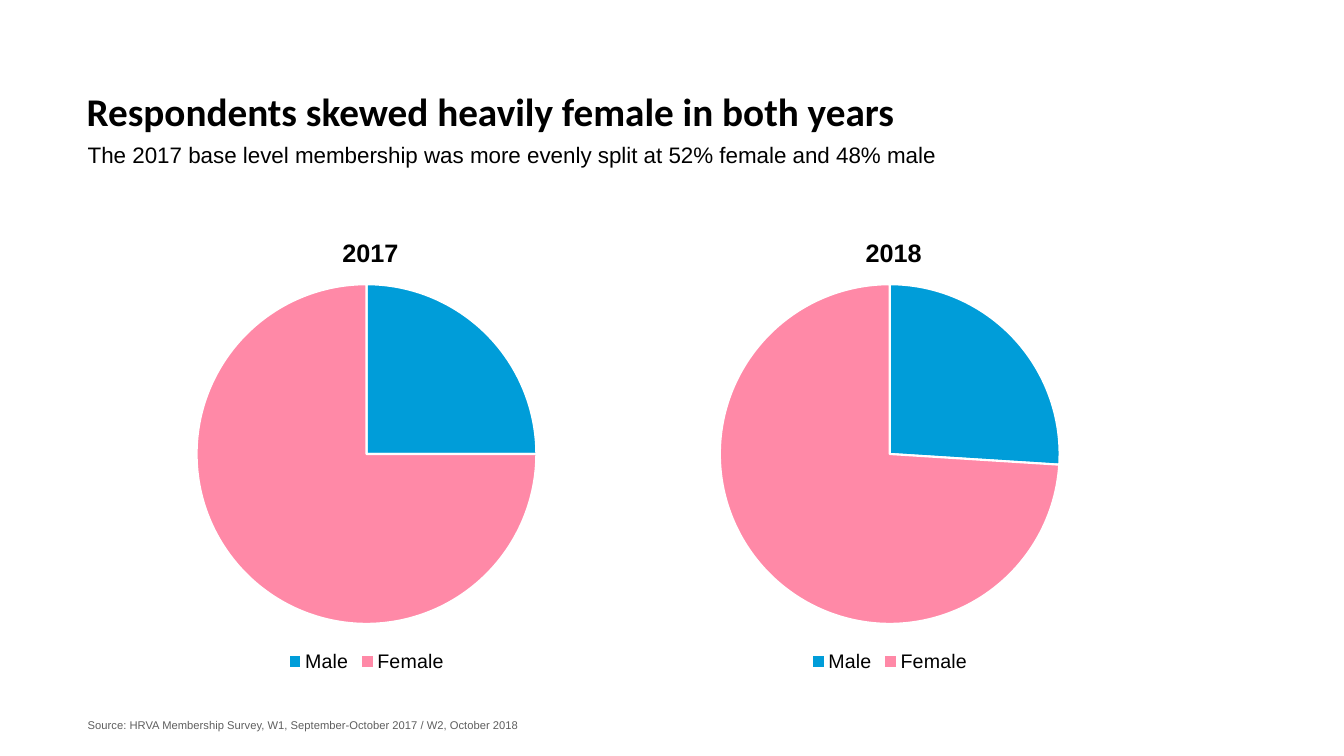
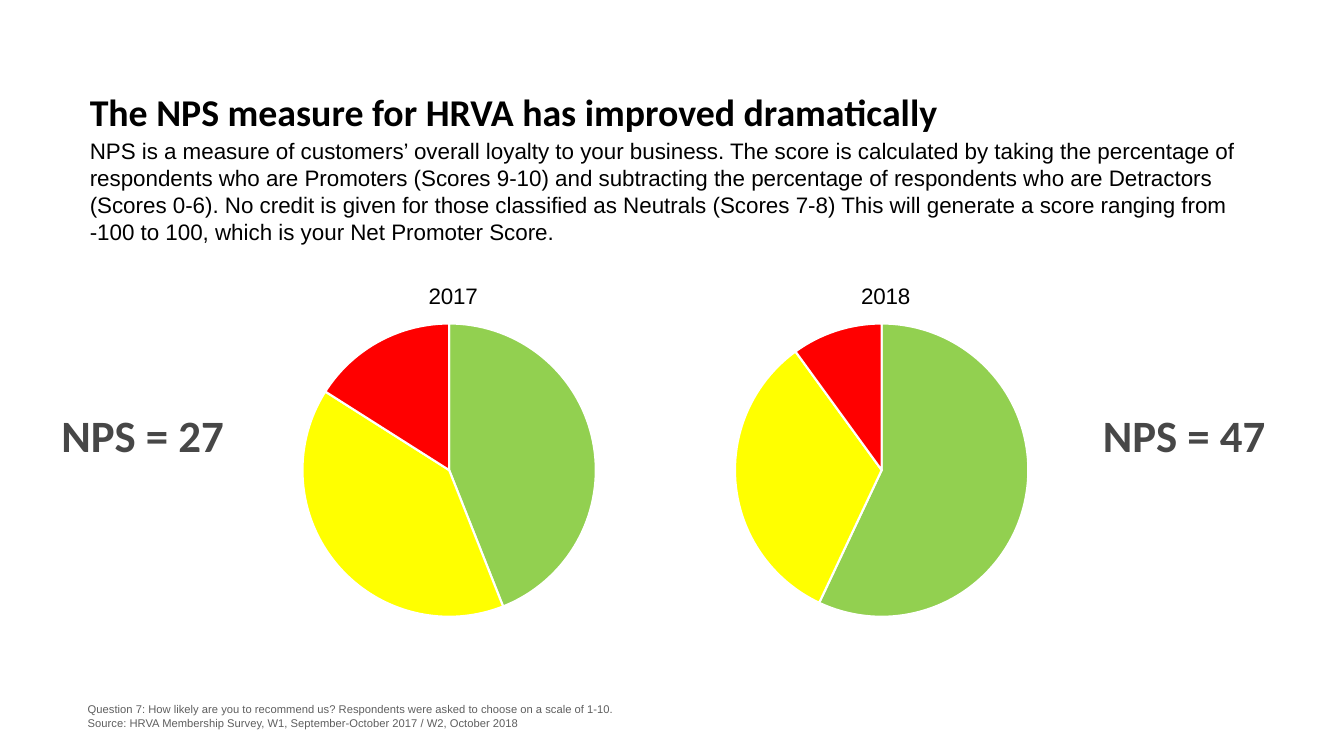
from lxml.etree import SubElement
from pptx import Presentation
from pptx.chart.data import CategoryChartData
from pptx.dml.color import RGBColor
from pptx.enum.chart import XL_CHART_TYPE, XL_LEGEND_POSITION
from pptx.enum.text import MSO_ANCHOR, PP_ALIGN
from pptx.oxml.ns import qn
from pptx.util import Pt

PX = 9144
COLORS = {
    "text": "000000", "note": "5F5F5F", "score": "474747", "line": "FFFFFF",
    "male": "009DD9", "female": "FF89A7",
    "promoter": "92D050", "neutral": "FFFF00", "detractor": "FF0000",
}
SOURCE = "Source: HRVA Membership Survey, W1, September-October 2017 / W2, October 2018"


def color(name):
    """Return a named colour."""
    return RGBColor.from_string(COLORS[name])


def style_font(font, name, size, color_name, bold=False):
    """Set face, size, colour and weight of a font."""
    font.name, font.size, font.bold = name, Pt(size), bold
    font.color.rgb = color(color_name)


def add_text(slide, box, lines, font, anchor=MSO_ANCHOR.TOP, align=PP_ALIGN.LEFT,
             line_spacing=None, space_before=0):
    """Add a margin-free text box with one paragraph per line."""
    frame = slide.shapes.add_textbox(*(length * PX for length in box)).text_frame
    frame.word_wrap, frame.vertical_anchor = True, anchor
    frame.margin_left = frame.margin_top = frame.margin_right = frame.margin_bottom = 0
    for index, line in enumerate(lines):
        paragraph = frame.paragraphs[0] if index == 0 else frame.add_paragraph()
        paragraph.text, paragraph.alignment = line, align
        paragraph.line_spacing, paragraph.space_before = line_spacing, Pt(space_before)
        style_font(paragraph.font, *font)


def add_title(slide, box, text, size):
    """Add the slide title."""
    add_text(slide, box, [text], ("Calibri", size, "text", True),
             MSO_ANCHOR.BOTTOM, line_spacing=0.8)


def add_body(slide, box, text):
    """Add the explanation below the title."""
    add_text(slide, box, [text], ("Arial", 16, "text"))


def add_footer(slide, top, lines):
    """Add the source notes at the foot of the slide."""
    add_text(slide, (87, top, 1191, 40), lines, ("Arial", 8, "note"),
             MSO_ANCHOR.BOTTOM, space_before=0.6)


def set_layout(element, box, position, inner=False):
    """Place a chart part, given in px relative to the chart box."""
    layout = element.find(qn("c:layout"))
    if layout is None:
        layout = element.makeelement(qn("c:layout"))
        element.insert(1 if element.find(qn("c:tx")) is not None else 0, layout)
    manual = SubElement(layout, qn("c:manualLayout"))
    if inner:
        SubElement(manual, qn("c:layoutTarget")).set("val", "inner")
    for tag in ("xMode", "yMode"):
        SubElement(manual, qn(f"c:{tag}")).set("val", "edge")
    for tag, length, whole in zip("xywh", position, box[2:] * 2):
        SubElement(manual, qn(f"c:{tag}")).set("val", str(round(length / whole, 4)))


def add_pie(slide, box, year, values, slices, title_at, title_font, pie_at, legend=False):
    """Add a pie chart titled with its year; slices maps categories to colours."""
    data = CategoryChartData()
    data.categories = list(slices)
    data.add_series("Series 1", values)
    chart = slide.shapes.add_chart(
        XL_CHART_TYPE.PIE, *(length * PX for length in box), data).chart
    style_font(chart.font, "Calibri", 10, "note")
    chart.has_title, chart.has_legend = True, legend
    paragraph = chart.chart_title.text_frame.paragraphs[0]
    paragraph.text = year
    style_font(paragraph.font, *title_font)
    if legend:
        chart.legend.position = XL_LEGEND_POSITION.BOTTOM
        chart.legend.include_in_layout = False
        style_font(chart.legend.font, "Arial", 14, "text")
    plot = chart.plots[0]
    plot.vary_by_categories = True
    for index, color_name in enumerate(slices.values()):
        form = plot.series[0].points[index].format
        form.fill.solid()
        form.fill.fore_color.rgb = color(color_name)
        form.line.color.rgb = color("line")
        form.line.width = Pt(1.5)
    chart_element = chart.element.find(qn("c:chart"))
    set_layout(chart_element.find(qn("c:title")), box, title_at)
    set_layout(chart_element.find(qn("c:plotArea")), box, pie_at, inner=True)


def build_gender_slide(slide):
    """Compare the gender split of respondents in both years."""
    add_title(slide, (86, 83, 1174, 50), "Respondents skewed heavily female in both years", 28)
    add_body(slide, (87, 140, 1164, 103),
             "The 2017 base level membership was more evenly split at 52% female and 48% male")
    slices = {"Male": "male", "Female": "female"}
    for column, (year, values) in enumerate({"2017": (25, 75), "2018": (26, 74)}.items()):
        add_pie(slide, (122 + 519 * column, 210, 483, 461), year, values, slices,
                (213, 20), ("Arial", 18, "text", True), (73, 72, 337, 337), legend=True)
    add_footer(slide, 686, [SOURCE])


def build_score_slide(slide):
    """Compare the promoter score of both years."""
    add_title(slide, (89, 83, 881, 50), "The NPS measure for HRVA has improved dramatically", 27)
    add_body(slide, (89, 136, 1145, 110),
             "NPS is a measure of customers’ overall loyalty to your business. The score is "
             "calculated by taking the percentage of respondents who are Promoters (Scores 9-10) "
             "and subtracting the percentage of respondents who are Detractors (Scores 0-6). "
             "No credit is given for those classified as Neutrals (Scores 7-8) This will generate "
             "a score ranging from -100 to 100, which is your Net Promoter Score.")
    slices = {"1": "promoter", "2": "neutral", "3": "detractor"}
    years = {"2017": (44, 40, 16), "2018": (57, 33, 10)}
    for column, (year, values) in enumerate(years.items()):
        add_pie(slide, (169 + 429 * column, 258, 553, 368), year, values, slices,
                (252, 18), ("Arial", 16, "text"), (131, 63, 291, 291))
        add_text(slide, (31 + 1033 * column, 399, 221, 64), [f"NPS = {values[0] - values[2] - column * 0}"
                 if column else "NPS = 27"], ("Calibri", 32, "score", True),
                 MSO_ANCHOR.MIDDLE, PP_ALIGN.CENTER)
    add_footer(slide, 684, [
        "Question 7: How likely are you to recommend us? "
        "Respondents were asked to choose on a scale of 1-10.", SOURCE])


def main():
    """Build and save the presentation."""
    presentation = Presentation()
    presentation.slide_width, presentation.slide_height = 1333 * PX, 750 * PX
    for build in (build_gender_slide, build_score_slide):
        build(presentation.slides.add_slide(presentation.slide_layouts[6]))
    presentation.save("out.pptx")


if __name__ == "__main__":
    main()
